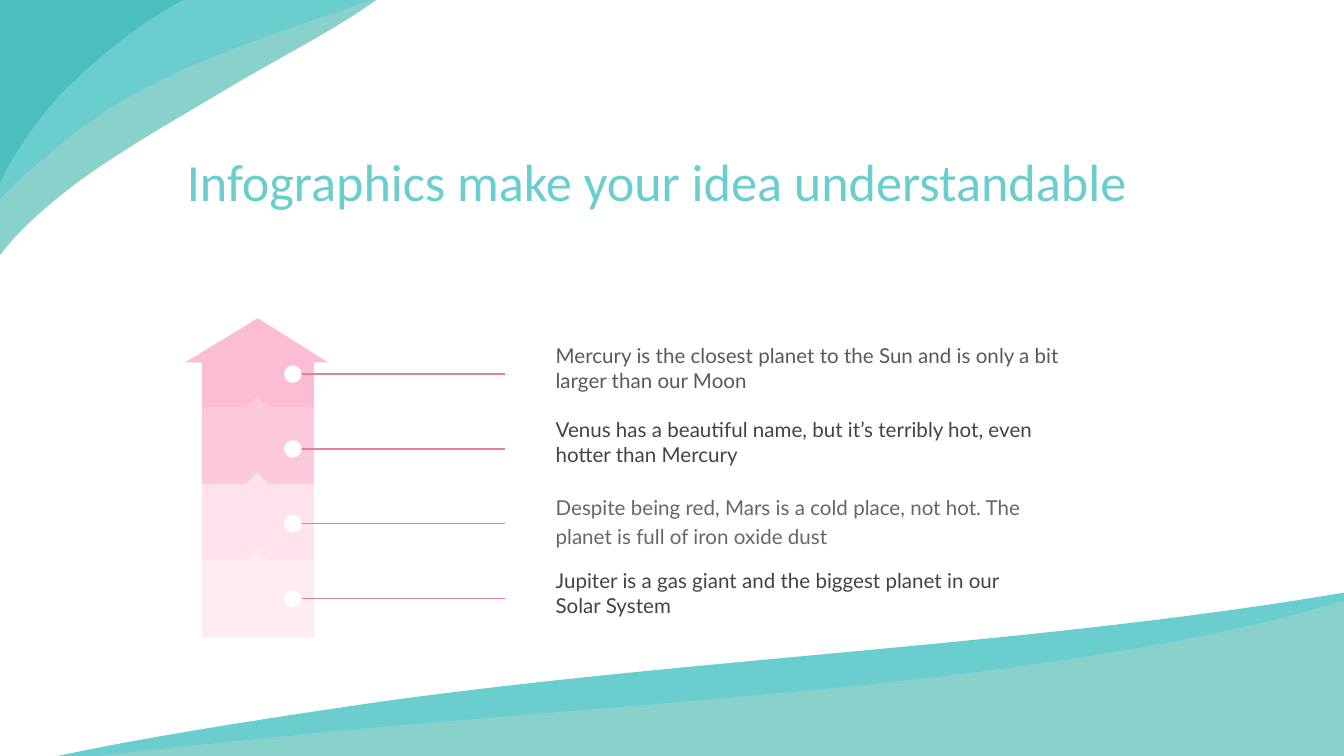
from lxml import etree
from pptx import Presentation
from pptx.dml.color import RGBColor
from pptx.enum.shapes import MSO_CONNECTOR, MSO_SHAPE
from pptx.enum.text import MSO_ANCHOR, MSO_AUTO_SIZE, PP_ALIGN
from pptx.oxml.ns import qn
from pptx.util import Pt

TOP, LEFT = MSO_ANCHOR.TOP, PP_ALIGN.LEFT
NO_FIT = MSO_AUTO_SIZE.NONE
STRAIGHT, DOT = MSO_CONNECTOR.STRAIGHT, MSO_SHAPE.FLOWCHART_CONNECTOR

WHITE = RGBColor(0xFF, 0xFF, 0xFF)
AQUA = RGBColor(0x6A, 0xCE, 0xCE)
SAGE = RGBColor(0x89, 0xD2, 0xCB)
TEAL = RGBColor(0x4B, 0xBF, 0xBF)
PINK = RGBColor(0xFC, 0xBC, 0xD4)
BLUSH = RGBColor(0xFF, 0xDB, 0xE5)
ROSE = RGBColor(0xE4, 0x80, 0x9B)
DARK_GREY = RGBColor(0x43, 0x43, 0x43)
MID_GREY = RGBColor(0x59, 0x59, 0x59)
LIGHT_GREY = RGBColor(0x66, 0x66, 0x66)

# Each outline is a start point, then line steps (x, y)
# and curve steps (control, control, end).
WAVES = [
    (AQUA, [
        (720, 317.5),
        (555.1, 345.6, 367.9, 352.8, 199.4, 376.6),
        (175.7, 380.2, 53.3, 397.4, 0, 412.6),
        (0, 416.2),
        (39.6, 406.1, 110.9, 400.3, 136.8, 398.2),
        (330.5, 378, 565.9, 370.8, 720, 324)]),
    (SAGE, [
        (720, 321.8),
        (565.9, 368.6, 330.5, 375.8, 136.8, 396),
        (110.9, 398.9, 39.6, 404.6, 0, 414),
        (0, 422.6), (720, 422.6)]),
    (SAGE, [
        (206.6, -3.6),
        (146.9, 18.7, 83.5, 34.6, 33.1, 77),
        (18.7, 89.3, 4.3, 100.1, -6.5, 114.5),
        (-6.5, 146.9),
        (4.3, 126.7, 27.4, 108.7, 40.3, 98.6),
        (67.7, 78.5, 97.9, 61.9, 126.7, 44.6),
        (153.4, 28.8, 181.4, 15.1, 206.6, -3.6)]),
    (AQUA, [
        (115.9, -8.6),
        (84.2, 2.2, 54.7, 26.6, 31.7, 49),
        (20.2, 61.9, 0, 87.1, -6.5, 109.4),
        (-6.5, 114.5),
        (4.3, 100.1, 18.7, 89.3, 33.1, 77),
        (83.5, 34.6, 146.9, 19.4, 206.6, -2.9),
        (211.7, -5, 216.7, -7.2, 221.8, -8.6)]),
    (TEAL, [
        (-4.3, -8.6), (-4.3, 109.4),
        (2.2, 87.1, 22.3, 61.2, 33.8, 49),
        (56.9, 26.6, 86.4, 2.2, 118.1, -8.6)]),
]

# Arrow: colour and opacity in percent of the bands below the head
BANDS = [(PINK, 82), (BLUSH, 80), (BLUSH, 55)]
BAND_TOP, BAND_STEP = 218, 41.2
ARROW_LEFT, ARROW_MID, ARROW_RIGHT = 108.2, 137.8, 168.2
NOTCH_HALF, NOTCH_RISE = 6, 6

# Text, colour, top, width, line spacing
PLANETS = [
    ("Mercury is the closest planet to the Sun and is only a bit larger than our Moon",
     MID_GREY, 176.8, 288, 1),
    ("Venus has a beautiful name, but it’s terribly hot, even hotter than Mercury",
     DARK_GREY, 216.2, 288, 1),
    ("Despite being red, Mars is a cold place, not hot. The planet is full of iron oxide dust",
     LIGHT_GREY, 256.3, 288, 1.15),
    ("Jupiter is a gas giant and the biggest planet in our Solar System",
     DARK_GREY, 297.1, 259.2, 1),
]
CALLOUT_TOP, CALLOUT_STEP = 200.4, 40.1
DOT_X, DOT_SIZE, LINE_END = 156.9, 9.4, 270.3


def paint(shape, color, opacity=100):
    shape.shadow.inherit = False
    shape.fill.solid()
    shape.fill.fore_color.rgb = color
    shape.line.fill.background()
    if opacity < 100:
        tint = shape.fill._xPr.find(qn("a:solidFill"))[0]
        etree.SubElement(tint, qn("a:alpha"), val=str(opacity * 1000))


def bend(shape, segment, controls):
    """Turn a straight freeform segment into a cubic curve."""
    segment.tag = qn("a:cubicBezTo")
    for i in (0, 2):
        point = etree.Element(qn("a:pt"), x=str(Pt(controls[i]) - shape.left),
                              y=str(Pt(controls[i + 1]) - shape.top))
        segment.insert(i // 2, point)


def add_outline(page, steps, color, opacity=100):
    ends = [(Pt(step[-2]), Pt(step[-1])) for step in steps]
    builder = page.shapes.build_freeform(*ends[0])
    builder.add_line_segments(ends[1:], close=True)
    shape = builder.convert_to_shape()
    segments = list(shape._element.iter(qn("a:lnTo")))
    for segment, step in zip(segments, steps[1:]):
        if len(step) == 6:
            bend(shape, segment, step[:4])
    paint(shape, color, opacity)


def notched_edge(y):
    """Left-to-right band edge with a small peak in the middle."""
    return [(ARROW_LEFT, y), (ARROW_MID - NOTCH_HALF, y), (ARROW_MID, y - NOTCH_RISE),
            (ARROW_MID + NOTCH_HALF, y), (ARROW_RIGHT, y)]


def add_arrow(page):
    head = [(ARROW_RIGHT, 194.2), (175.8, 194.2), (138.1, 170.5),
            (99.2, 194.2), (ARROW_LEFT, 194.2)]
    add_outline(page, head + notched_edge(BAND_TOP), PINK)
    for i, (color, opacity) in enumerate(BANDS):
        top = BAND_TOP + i * BAND_STEP
        bottom = top + BAND_STEP
        if i < len(BANDS) - 1:
            base = notched_edge(bottom)
        else:
            base = [(ARROW_LEFT, bottom), (ARROW_RIGHT, bottom)]
        add_outline(page, notched_edge(top) + base[::-1], color, opacity)


def add_callout(page, y):
    line = page.shapes.add_connector(STRAIGHT, Pt(DOT_X), Pt(y), Pt(LINE_END), Pt(y))
    line.line.color.rgb = ROSE
    line.line.width = Pt(0.75)
    etree.SubElement(line._element.spPr, qn("a:effectLst"))
    dot = page.shapes.add_shape(DOT, Pt(DOT_X - DOT_SIZE / 2), Pt(y - DOT_SIZE / 2),
                                Pt(DOT_SIZE), Pt(DOT_SIZE))
    paint(dot, WHITE)


def write(box, text, font_name, size, color, spacing=1):
    frame = box.text_frame
    frame.word_wrap = True
    frame.auto_size = NO_FIT
    frame.vertical_anchor = TOP
    frame.margin_left = frame.margin_right = Pt(7.2)
    frame.margin_top = frame.margin_bottom = Pt(7.2)
    para = frame.paragraphs[0]
    para.text = text
    para.alignment = LEFT
    para.line_spacing = spacing
    para.font.name = font_name
    para.font.size = Pt(size)
    para.font.color.rgb = color


def set_title(page, text):
    title = page.shapes.title
    title.left, title.top = Pt(92.9), Pt(72.7)
    title.width, title.height = Pt(583.9), Pt(45.4)
    write(title, text, "Calibri", 28, AQUA)


def main():
    deck = Presentation()
    deck.slide_width, deck.slide_height = Pt(720), Pt(405)
    page = deck.slides.add_slide(deck.slide_layouts[5])
    for color, steps in WAVES:
        add_outline(page, steps, color)
    set_title(page, "Infographics make your idea understandable")
    add_arrow(page)
    for i, (text, color, top, width, spacing) in enumerate(PLANETS):
        add_callout(page, CALLOUT_TOP + i * CALLOUT_STEP)
        box = page.shapes.add_textbox(Pt(290.6), Pt(top), Pt(width), Pt(47.5))
        write(box, text, "Lato", 11, color, spacing)
    deck.save("out.pptx")


if __name__ == "__main__":
    main()
